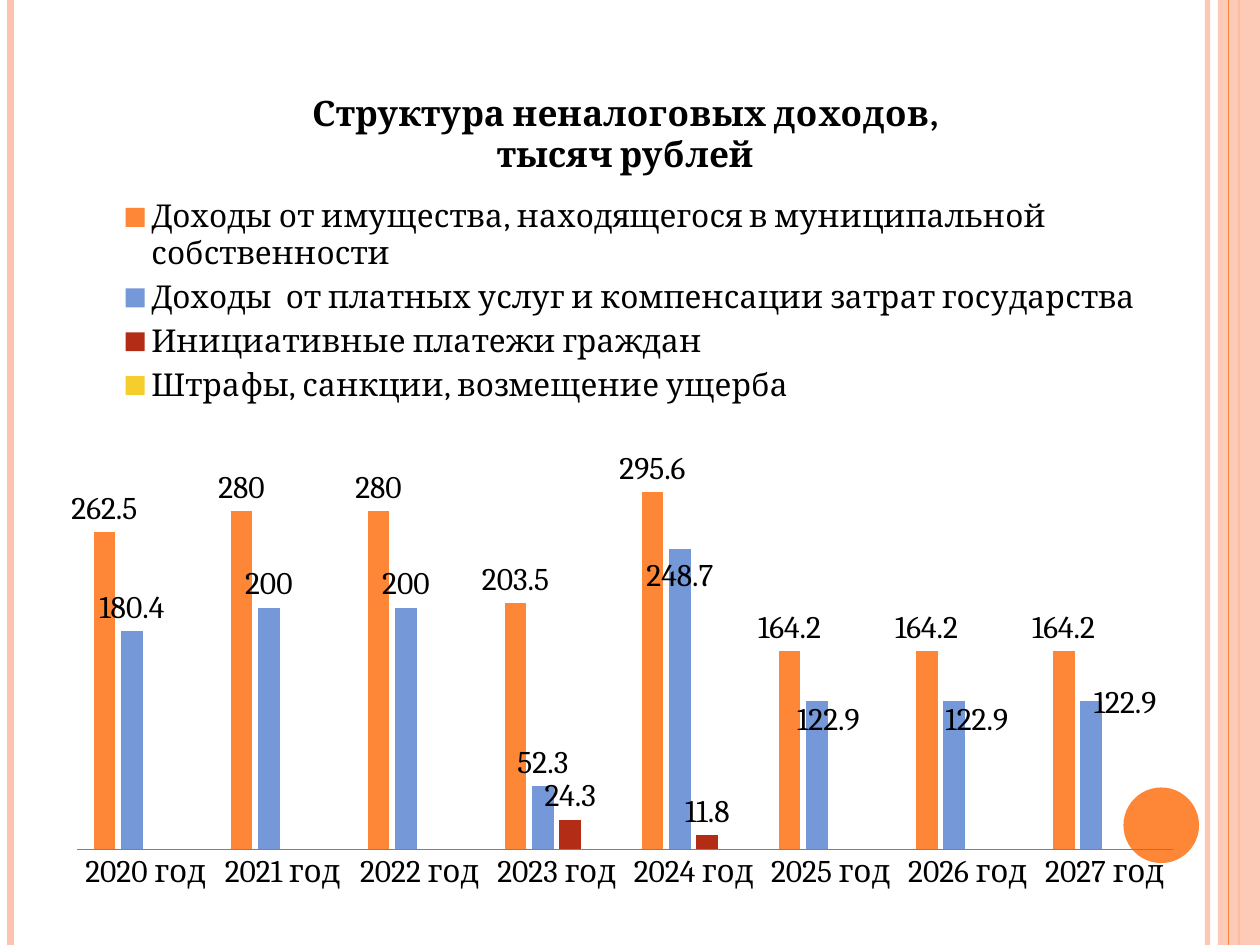
from lxml.etree import SubElement
from pptx import Presentation
from pptx.chart.data import CategoryChartData
from pptx.dml.color import RGBColor
from pptx.enum.chart import XL_CHART_TYPE as ChartType
from pptx.enum.chart import XL_LABEL_POSITION as LabelPosition
from pptx.enum.chart import XL_LEGEND_POSITION as LegendPosition
from pptx.enum.chart import XL_TICK_MARK as TickMark
from pptx.enum.shapes import MSO_CONNECTOR as Connector
from pptx.enum.shapes import MSO_SHAPE as Shape
from pptx.oxml import parse_xml
from pptx.oxml.ns import nsdecls, qn
from pptx.util import Pt

ORANGE = RGBColor(0xFE, 0x86, 0x37)
PEACH = RGBColor(0xFE, 0xC3, 0xAE)
BLUE = RGBColor(0x75, 0x98, 0xD9)
RED = RGBColor(0xB3, 0x2C, 0x16)
YELLOW = RGBColor(0xF5, 0xCD, 0x2D)
GRAY = RGBColor(0x80, 0x80, 0x80)
BLACK = RGBColor(0, 0, 0)
FONT = "Cambria"
HEIGHT = 540

YEARS = [f"{year} год" for year in range(2020, 2028)]
INCOME = [
    ("Доходы от имущества, находящегося в муниципальной собственности", ORANGE,
     [262.5, 280, 280, 203.5, 295.6, 164.2, 164.2, 164.2]),
    ("Доходы  от платных услуг и компенсации затрат государства", BLUE,
     [180.4, 200, 200, 52.3, 248.7, 122.9, 122.9, 122.9]),
    ("Инициативные платежи граждан", RED,
     [None, None, None, 24.3, 11.8, None, None, None]),
    ("Штрафы, санкции, возмещение ущерба", YELLOW, [None] * 8),
]
SERVICE_LABEL_SHIFTS = {4: (0, 0.06), 5: (0.01, 0.05), 6: (0.02, 0.05), 7: (0.03, 0.03)}


def set_alpha(shape, percent):
    for color in shape.element.xpath("./p:spPr//a:srgbClr"):
        SubElement(color, qn("a:alpha")).set("val", str(percent * 1000))


def add_stripe(slide, x, color, width, alpha=100):
    stripe = slide.shapes.add_connector(Connector.STRAIGHT, Pt(x), 0, Pt(x), Pt(HEIGHT))
    stripe.line.color.rgb = color
    stripe.line.width = Pt(width)
    if alpha < 100:
        set_alpha(stripe, alpha)
    SubElement(stripe.element.spPr, qn("a:effectLst"))


def add_filled(slide, kind, left, top, width, height, color, alpha=100):
    shape = slide.shapes.add_shape(kind, Pt(left), Pt(top), Pt(width), Pt(height))
    shape.shadow.inherit = False
    shape.fill.solid()
    shape.fill.fore_color.rgb = color
    shape.line.fill.background()
    if alpha < 100:
        set_alpha(shape, alpha)


def write_text(frame, text, size=18, bold=False, color=BLACK):
    frame.text = text
    for paragraph in frame.paragraphs:
        format_font(paragraph.font, size, bold, color)


def format_font(font, size=18, bold=False, color=BLACK):
    font.name = FONT
    font.size = Pt(size)
    font.bold = bold
    font.color.rgb = color


def manual_layout(x, y, w=None, h=None, inner=False, edge=True):
    parts = [("layoutTarget", "inner")] if inner else []
    if edge:
        parts += [("xMode", "edge"), ("yMode", "edge")]
    parts += [("x", x), ("y", y)]
    if w is not None:
        parts += [("w", w), ("h", h)]
    body = "".join(f'<c:{tag} val="{value}"/>' for tag, value in parts)
    return parse_xml(f'<c:layout {nsdecls("c")}><c:manualLayout>{body}</c:manualLayout></c:layout>')


def format_axes(chart):
    years = chart.category_axis
    years.major_tick_mark = TickMark.NONE
    years.format.line.color.rgb = GRAY
    years.format.line.width = Pt(0.75)
    amounts = chart.value_axis
    amounts.visible = False
    amounts.has_major_gridlines = False
    amounts.minimum_scale = 0
    amounts.maximum_scale = 300


def format_series(plot):
    plot.vary_by_categories = False
    plot.gap_width = 150
    plot.overlap = -25
    for series, (_, color, _) in zip(plot.series, INCOME):
        series.format.fill.solid()
        series.format.fill.fore_color.rgb = color
        labels = series.data_labels
        labels.show_value = True
        labels.position = LabelPosition.OUTSIDE_END
        format_font(labels.font)


def shift_service_labels(chart):
    services = chart.plots[0].series[1]
    for index, (dx, dy) in SERVICE_LABEL_SHIFTS.items():
        services.points[index].data_label.position = LabelPosition.OUTSIDE_END
        label_index = chart.element.xpath(f'.//c:ser[2]//c:dLbl/c:idx[@val="{index}"]')[0]
        label_index.addnext(manual_layout(dx, dy, edge=False))


def place_parts(chart):
    plot_area = chart.element.xpath(".//c:plotArea")[0]
    for layout in plot_area.xpath("./c:layout"):
        plot_area.remove(layout)
    plot_area.insert(0, manual_layout(0.02, 0.5, 0.96, 0.43, inner=True))
    overlay = chart.element.xpath(".//c:legend/c:overlay")[0]
    overlay.addprevious(manual_layout(0.05, 0.15, 0.91, 0.26))


def add_income_chart(slide):
    data = CategoryChartData()
    data.categories = YEARS
    for name, _, values in INCOME:
        data.add_series(name, values)
    chart = slide.shapes.add_chart(
        ChartType.COLUMN_CLUSTERED, Pt(31), Pt(37.5), Pt(652.5), Pt(481.5), data).chart
    format_font(chart.font)
    chart.has_title = True
    write_text(chart.chart_title.text_frame, "Структура неналоговых доходов,\nтысяч рублей",
               size=20, bold=True)
    chart.chart_title.include_in_layout = False
    chart.has_legend = True
    chart.legend.position = LegendPosition.TOP
    chart.legend.include_in_layout = False
    format_font(chart.legend.font)
    format_axes(chart)
    format_series(chart.plots[0])
    shift_service_labels(chart)
    place_parts(chart)


def main():
    deck = Presentation()
    deck.slide_width, deck.slide_height = Pt(720), Pt(HEIGHT)
    slide = deck.slides.add_slide(deck.slide_layouts[6])
    add_stripe(slide, 690, PEACH, 3, alpha=93)
    add_stripe(slide, 6, PEACH, 4.5)
    add_stripe(slide, 708, ORANGE, 1.5)
    add_filled(slide, Shape.RECTANGLE, 696, 0, 24, HEIGHT, PEACH, alpha=87)
    add_stripe(slide, 702, ORANGE, 0.75)
    add_filled(slide, Shape.OVAL, 642, 450, 43.2, 43.2, ORANGE)
    add_income_chart(slide)
    deck.save("out.pptx")


if __name__ == "__main__":
    main()
